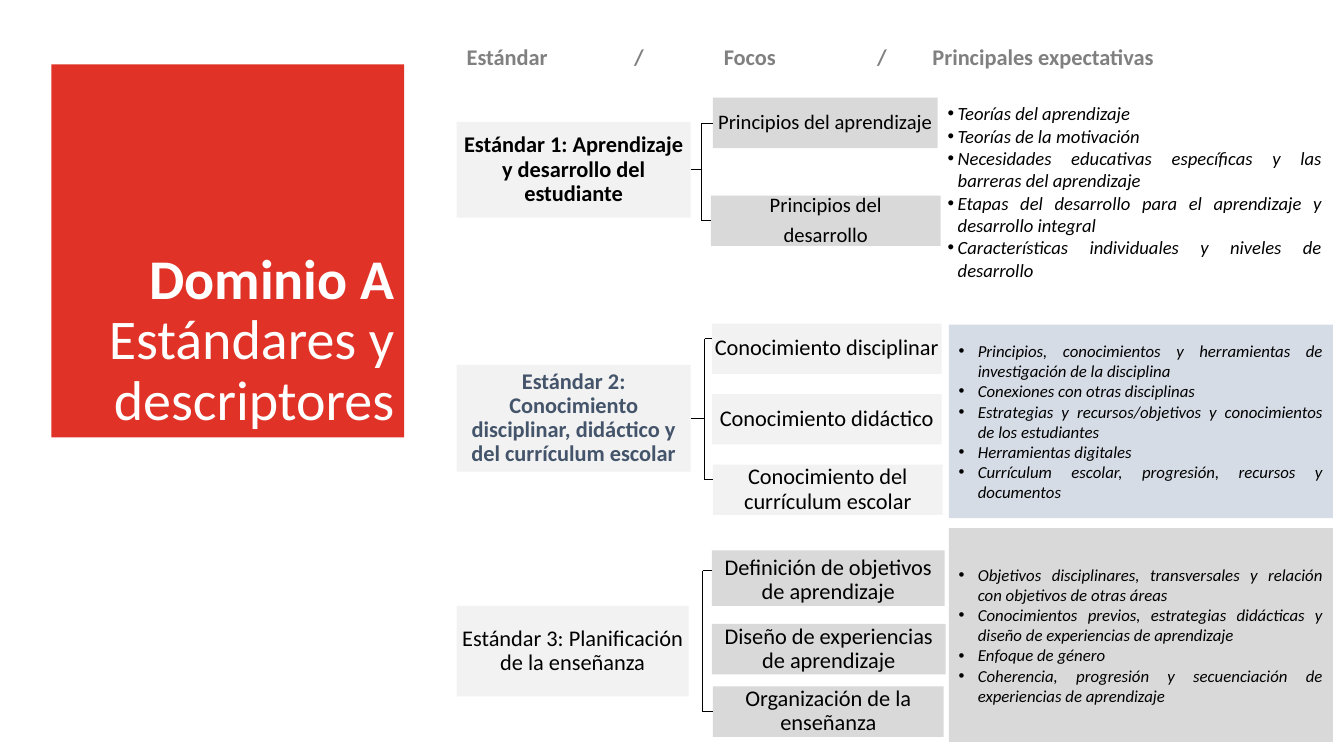
from lxml import etree
from pptx import Presentation
from pptx import util as u
from pptx.dml.color import RGBColor
from pptx.enum import shapes, text
from pptx.oxml.ns import qn

PX = 9144
LIGHT, GREY, BLUE = "F2F2F2", "D9D9D9", "D6DCE5"
BLACK, SLATE = "000000", "44546A"
BOX_INSET, LIST_INSET = (1, 1, 1, 1), (10, 5, 10, 5)
SNAP = 5

STANDARDS = [
    {
        "standard": ((453, 121, 232, 95), "Estándar 1: Aprendizaje y desarrollo del estudiante",
                     {"bold": True}, BLACK),
        "fill": GREY, "size": 14.7,
        "focuses": [((707, 97, 223, 50), ["Principios del aprendizaje"], "m"),
                    ((705, 194, 228, 50), ["Principios del", "desarrollo"], "m")],
        "spine": 696, "arms": (121, 222), "stem": True,
        "area": (930, 66, 391, 248), "area_fill": None, "list_size": 13.3, "hang": 10,
        "expectations": [
            "Teorías del aprendizaje",
            "Teorías de la motivación",
            "Necesidades educativas específicas y las barreras del aprendizaje",
            "Etapas del desarrollo para el aprendizaje y desarrollo integral",
            "Características individuales y niveles de desarrollo"],
    },
    {
        "standard": ((453, 362, 232, 106),
                     "Estándar 2: Conocimiento disciplinar, didáctico y del currículum escolar",
                     {"bold": True}, SLATE),
        "fill": LIGHT, "size": 16,
        "focuses": [((706, 321, 228, 50), ["Conocimiento disciplinar"], "m"),
                    ((706, 391, 228, 50), ["Conocimiento didáctico"], "m"),
                    ((707, 461, 228, 50), ["Conocimiento del currículum escolar"], "m")],
        "spine": 699, "arms": (336, 476), "stem": True,
        "area": (941, 322, 381, 192), "area_fill": BLUE, "list_size": 12, "hang": 19,
        "expectations": [
            "Principios, conocimientos y herramientas de investigación de la disciplina",
            "Conexiones con otras disciplinas",
            "Estrategias y recursos/objetivos y conocimientos de los estudiantes",
            "Herramientas digitales",
            "Currículum escolar, progresión, recursos y documentos"],
    },
    {
        "standard": ((453, 601, 230, 90), "Estándar 3: Planificación de la enseñanza", {}, BLACK),
        "fill": GREY, "size": 16,
        "focuses": [((706, 546, 231, 55), ["Definición de objetivos de aprendizaje"], "b"),
                    ((706, 619, 232, 50), ["Diseño de experiencias de aprendizaje"], "m"),
                    ((707, 681, 229, 50), ["Organización de la enseñanza"], "b")],
        "spine": 697, "arms": (566, 707), "stem": False,
        "area": (941, 524, 381, 212), "area_fill": GREY, "list_size": 12, "hang": 19,
        "expectations": [
            "Objetivos disciplinares, transversales y relación con objetivos de otras áreas",
            "Conocimientos previos, estrategias didácticas y diseño de experiencias de aprendizaje",
            "Enfoque de género",
            "Coherencia, progresión y secuenciación de experiencias de aprendizaje"],
    },
]


def px(length):
    """Turn a px length into EMU."""
    return u.Emu(int(length * PX))


def color(hex_value):
    """Turn a hex string into a colour."""
    return RGBColor.from_string(hex_value)


def apply(target, formats):
    """Set each attribute named in formats on target."""
    for name, value in formats.items():
        setattr(target, name, value)


def add_panel(slide, area, fill, inset, anchor):
    """Add a borderless rectangle, or a text box when fill is None."""
    place = [px(length) for length in area]
    if fill:
        panel = slide.shapes.add_shape(shapes.MSO_SHAPE.RECTANGLE, *place)
        panel.shadow.inherit = False
        panel.fill.solid()
        panel.fill.fore_color.rgb = color(fill)
        panel.line.fill.background()
    else:
        panel = slide.shapes.add_textbox(*place)
    left, top, right, bottom = map(px, inset)
    apply(panel.text_frame, {
        "word_wrap": True, "margin_left": left, "margin_top": top,
        "margin_right": right, "margin_bottom": bottom,
        "vertical_anchor": {"t": text.MSO_ANCHOR.TOP, "m": text.MSO_ANCHOR.MIDDLE,
                            "b": text.MSO_ANCHOR.BOTTOM}[anchor]})
    return panel


def add_run(paragraph, words, size, hex_value, **formats):
    """Add a run of Calibri text."""
    run = paragraph.add_run()
    run.text = words
    apply(run.font, {"name": "Calibri", "size": u.Pt(size), **formats})
    run.font.color.rgb = color(hex_value)


def write_lines(panel, lines, paragraph_formats, size, hex_value, **formats):
    """Write one paragraph per line and return the paragraphs."""
    frame = panel.text_frame
    for index, words in enumerate(lines):
        paragraph = frame.add_paragraph() if index else frame.paragraphs[0]
        apply(paragraph, paragraph_formats)
        add_run(paragraph, words, size, hex_value, **formats)
    return frame.paragraphs


def add_box(slide, area, lines, fill, size, hex_value=BLACK, anchor="m", **formats):
    """Add a filled box with centred text."""
    box = add_panel(slide, area, fill, BOX_INSET, anchor)
    centred = {"alignment": text.PP_ALIGN.CENTER, "line_spacing": 0.9,
               "space_after": u.Pt(5 if len(lines) > 1 else 0)}
    write_lines(box, lines, centred, size, hex_value, **formats)
    return box


def add_expectations(slide, area, fill, lines, size, hang):
    """Add a justified bullet list."""
    panel = add_panel(slide, area, fill, LIST_INSET, "m")
    justified = {"alignment": text.PP_ALIGN.JUSTIFY}
    for paragraph in write_lines(panel, lines, justified, size, BLACK, italic=True):
        properties = paragraph._p.get_or_add_pPr()
        properties.set("marL", str(px(hang)))
        properties.set("indent", str(-px(hang)))
        etree.SubElement(properties, qn("a:buFont")).set("typeface", "Arial")
        etree.SubElement(properties, qn("a:buChar")).set("char", "•")


def add_line(slide, start, end):
    """Add a thin black straight connector."""
    line = slide.shapes.add_connector(
        shapes.MSO_CONNECTOR.STRAIGHT, *map(px, (*start, *end)))
    line.line.width = u.Pt(0.5)
    line.line.color.rgb = color(BLACK)
    etree.SubElement(line._element.spPr, qn("a:effectLst"))
    return line


def add_bracket(slide, row, standard, focus_boxes):
    """Link a standard to its first and last focus."""
    spine, ends = row["spine"], []
    outer = (row["focuses"][0][0], row["focuses"][-1][0])
    for y, area, box in zip(row["arms"], outer, (focus_boxes[0], focus_boxes[-1])):
        middle = area[1] + area[3] / 2
        joined = abs(y - middle) <= SNAP
        y = middle if joined else y
        arm = add_line(slide, (spine, y), (area[0], y))
        if joined:
            arm.end_connect(box, 1)
        ends.append((spine, y))
    add_line(slide, *ends)
    if row["stem"]:
        left, top, width, height = row["standard"][0]
        middle = top + height / 2
        stem = add_line(slide, (left + width, middle), (spine, middle))
        stem.begin_connect(standard, 3)


def add_title(slide):
    """Add the red title block."""
    block = add_panel(slide, (51, 64, 350, 370), "E03226", LIST_INSET, "b")
    heading = block.text_frame.paragraphs[0]
    apply(heading, {"alignment": text.PP_ALIGN.RIGHT, "line_spacing": 0.9})
    add_run(heading, "Dominio A", 40, "FFFFFF", bold=True)
    heading.add_line_break()
    add_run(heading, "Estándares y descriptores", 40, "FFFFFF", bold=False)


def add_column_heads(slide):
    """Add the column heads, spaced by tab stops."""
    heads = add_panel(slide, (453, 38, 829, 37), None, LIST_INSET, "t")
    names = "\t".join(["Estándar", "/", "Focos", "/", "Principales expectativas"])
    row = write_lines(heads, [names], {}, 16, "808080", bold=True)[0]
    stops = etree.SubElement(row._p.get_or_add_pPr(), qn("a:tabLst"))
    for position in (166, 255, 407, 462):
        stop = etree.SubElement(stops, qn("a:tab"))
        stop.set("pos", str(px(position)))
        stop.set("algn", "l")


def add_standard(slide, row):
    """Add one standard with its focuses, bracket and expectations."""
    area, name, formats, hex_value = row["standard"]
    standard = add_box(slide, area, [name], LIGHT, 16, hex_value, **formats)
    focus_boxes = [add_box(slide, place, lines, row["fill"], row["size"], anchor=anchor)
                   for place, lines, anchor in row["focuses"]]
    add_bracket(slide, row, standard, focus_boxes)
    add_expectations(slide, row["area"], row["area_fill"], row["expectations"],
                     row["list_size"], row["hang"])


def main():
    """Build the slide and save it."""
    deck = Presentation()
    apply(deck, {"slide_width": px(1333), "slide_height": px(750)})
    slide = deck.slides.add_slide(deck.slide_layouts[6])
    add_title(slide)
    add_column_heads(slide)
    for row in STANDARDS:
        add_standard(slide, row)
    deck.save("out.pptx")


if __name__ == "__main__":
    main()
